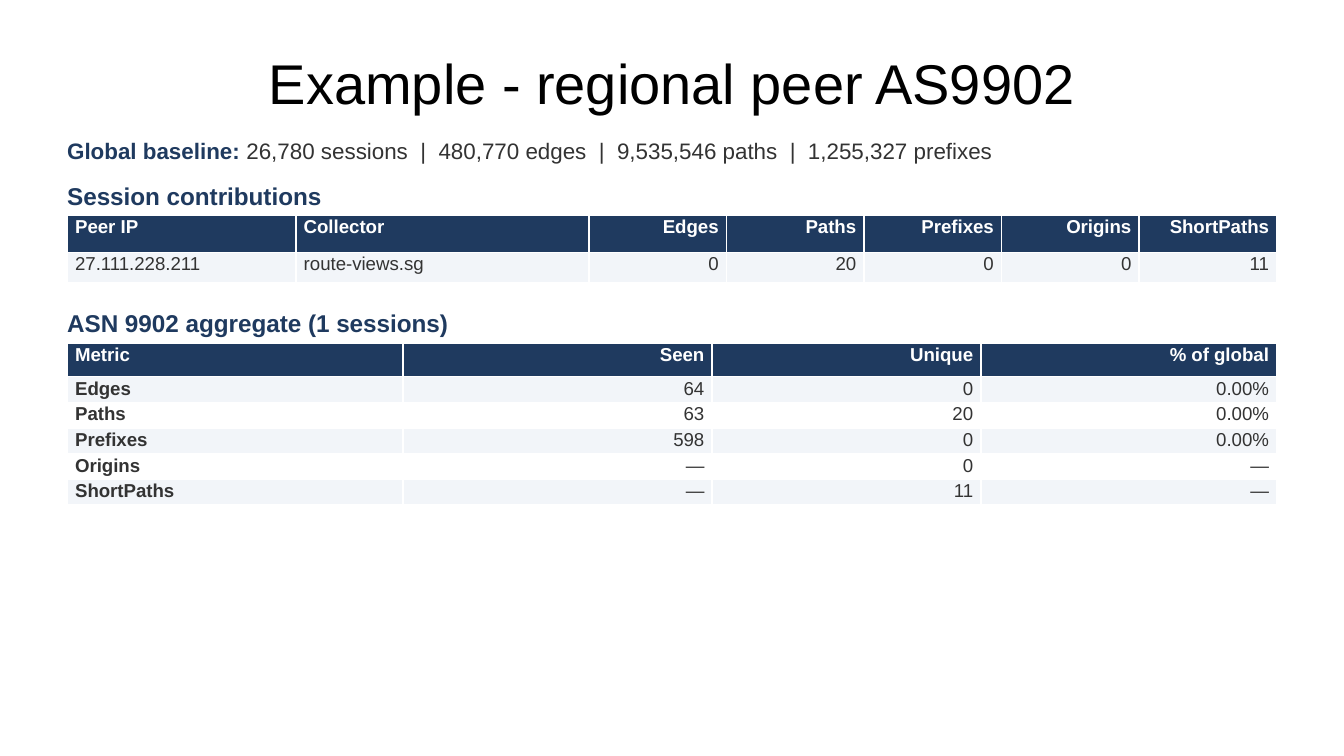
import pptx
import pptx.util
import pptx.dml.color
import pptx.enum.text

Cm = pptx.util.Cm
Pt = pptx.util.Pt
ALIGN = pptx.enum.text.PP_ALIGN
ANCHOR = pptx.enum.text.MSO_ANCHOR

NAVY, GREY, PALE, WHITE, BLACK = "1F3A5F", "333333", "F2F5F9", "FFFFFF", "000000"
LEFT, WIDTH = 1.27, 22.86

TITLE = "Example - regional peer AS9902"
TEXTS = [
    (2.59, 0.71, 12, [
        ("Global baseline: ", NAVY, True),
        ("26,780 sessions  |  480,770 edges  |  9,535,546 paths  |  1,255,327 prefixes", GREY, False),
    ]),
    (3.43, 0.61, 13, [("Session contributions", NAVY, True)]),
    (5.82, 0.61, 13, [("ASN 9902 aggregate (1 sessions)", NAVY, True)]),
]
TABLES = [
    {
        "top": 4.06,
        "cols": [4.32, 5.54] + [2.6] * 5,
        "heights": (0.71, 0.58),
        "left_cols": 2,
        "bold_cols": 0,
        "rows": [
            ["Peer IP", "Collector", "Edges", "Paths", "Prefixes", "Origins", "ShortPaths"],
            ["27.111.228.211", "route-views.sg", "0", "20", "0", "0", "11"],
        ],
    },
    {
        "top": 6.48,
        "cols": [6.35, 5.84, 5.08, 5.59],
        "heights": (0.64, 0.47),
        "left_cols": 1,
        "bold_cols": 1,
        "rows": [
            ["Metric", "Seen", "Unique", "% of global"],
            ["Edges", "64", "0", "0.00%"],
            ["Paths", "63", "20", "0.00%"],
            ["Prefixes", "598", "0", "0.00%"],
            ["Origins", "—", "0", "—"],
            ["ShortPaths", "—", "11", "—"],
        ],
    },
]


def rgb(value):
    return pptx.dml.color.RGBColor.from_string(value)


def add_run(p, text, size, color, bold=False):
    r = p.add_run()
    r.text = text
    r.font.name = "Arial"
    r.font.size = Pt(size)
    r.font.bold = bold
    r.font.color.rgb = rgb(color)


def add_title(slide):
    sp = slide.shapes.title
    sp.left, sp.top, sp.width, sp.height = Cm(LEFT), Cm(0.58), Cm(WIDTH), Cm(1.96)
    tf = sp.text_frame
    tf.vertical_anchor = ANCHOR.MIDDLE
    p = tf.paragraphs[0]
    p.alignment = ALIGN.CENTER
    add_run(p, TITLE, 30, BLACK)


def add_text(slide, top, height, size, runs):
    sp = slide.shapes.add_textbox(Cm(LEFT), Cm(top), Cm(WIDTH), Cm(height))
    tf = sp.text_frame
    tf.word_wrap = True
    tf.margin_left = tf.margin_top = tf.margin_right = tf.margin_bottom = 0
    for text, color, bold in runs:
        add_run(tf.paragraphs[0], text, size, color, bold)


def fill_cell(cell, text, fill, color, bold, align):
    cell.fill.solid()
    cell.fill.fore_color.rgb = rgb(fill)
    cell.margin_left = cell.margin_right = Cm(0.15)
    cell.margin_top = cell.margin_bottom = Cm(0.03)
    p = cell.text_frame.paragraphs[0]
    p.alignment = align
    add_run(p, text, 10, color, bold)


def add_table(slide, data):
    rows, cols = data["rows"], data["cols"]
    head, body = data["heights"]
    height = head + body * (len(rows) - 1)
    table = slide.shapes.add_table(
        len(rows), len(cols), Cm(LEFT), Cm(data["top"]), Cm(WIDTH), Cm(height)
    ).table
    for column, width in zip(table.columns, cols):
        column.width = Cm(width)
    for i, row in enumerate(rows):
        table.rows[i].height = Cm(body if i else head)
        fill = (WHITE, PALE)[i % 2] if i else NAVY
        for j, text in enumerate(row):
            align = ALIGN.LEFT if j < data["left_cols"] else ALIGN.RIGHT
            bold = i == 0 or j < data["bold_cols"]
            fill_cell(table.cell(i, j), text, fill, GREY if i else WHITE, bold, align)


def main():
    prs = pptx.Presentation()
    prs.slide_width, prs.slide_height = Cm(25.4), Cm(14.29)
    slide = prs.slides.add_slide(prs.slide_layouts[5])
    add_title(slide)
    for text in TEXTS:
        add_text(slide, *text)
    for data in TABLES:
        add_table(slide, data)
    prs.save("out.pptx")


if __name__ == "__main__":
    main()
